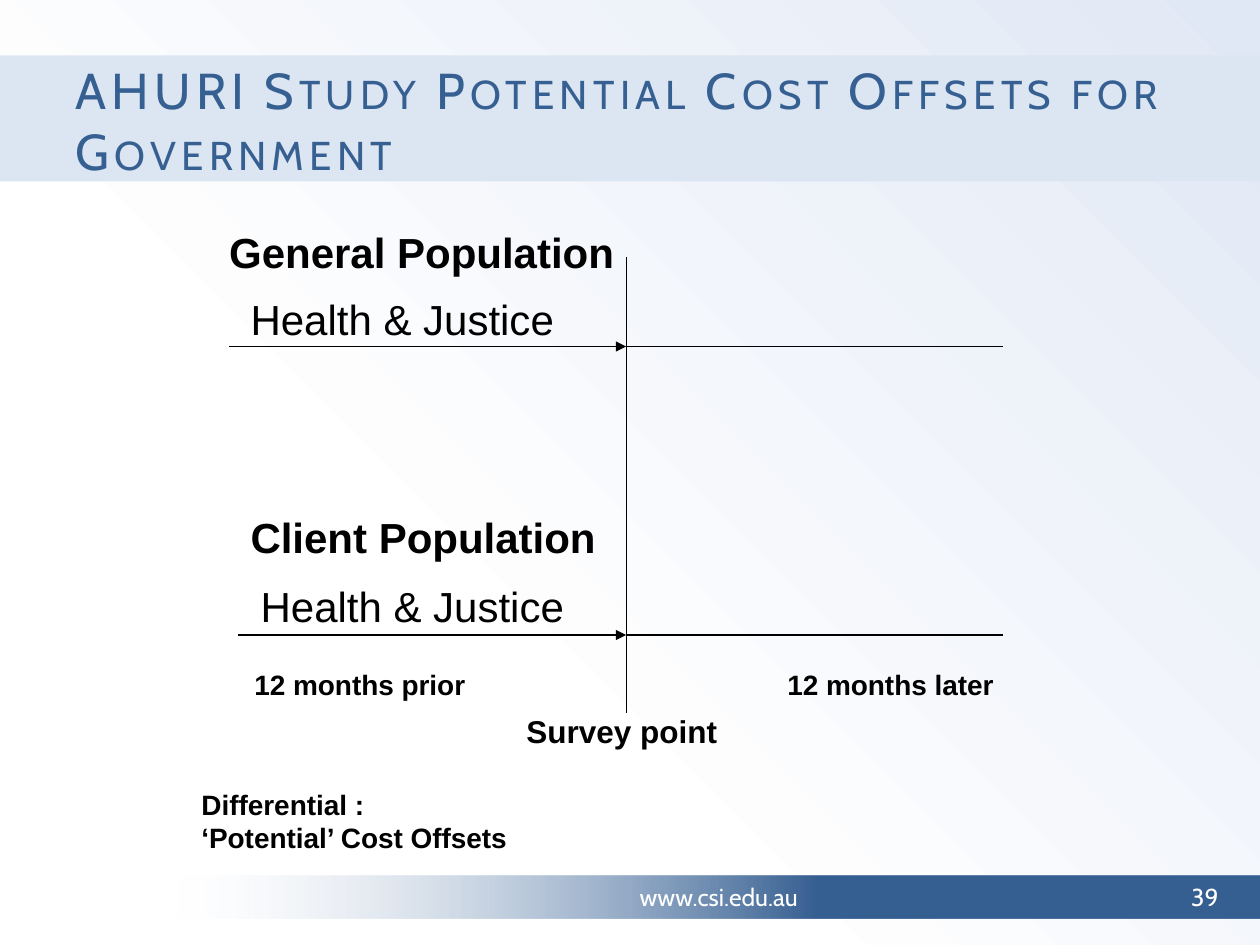
from lxml import etree
from pptx import Presentation
from pptx.dml.color import RGBColor
from pptx.enum.shapes import MSO_CONNECTOR, MSO_SHAPE
from pptx.enum.text import MSO_ANCHOR, MSO_AUTO_SIZE, PP_ALIGN
from pptx.oxml.ns import qn
from pptx.util import Inches, Pt

STRAIGHT = MSO_CONNECTOR.STRAIGHT
RECTANGLE = MSO_SHAPE.RECTANGLE
MIDDLE, TOP = MSO_ANCHOR.MIDDLE, MSO_ANCHOR.TOP
NO_FIT = MSO_AUTO_SIZE.NONE
LEFT, CENTER, RIGHT = PP_ALIGN.LEFT, PP_ALIGN.CENTER, PP_ALIGN.RIGHT

BLACK, WHITE, NAVY, PALE, MIST = "000000", "FFFFFF", "376092", "DCE6F2", "E1E8F5"

TITLE = "AHURI Study Potential Cost Offsets for Government"
WEBSITE = "www.csi.edu.au"
PAGE_NUMBER = "39"

LABELS = [
    (["General Population"], 1.72, 1.75, 3.28, 0.5, 24, True),
    (["Health & Justice"], 1.89, 2.28, 2.64, 0.5, 24, False),
    (["Client Population"], 1.89, 4.01, 2.96, 0.5, 24, True),
    (["Health & Justice"], 1.97, 4.56, 2.64, 0.5, 24, False),
    (["12 months prior"], 1.92, 5.25, 1.88, 0.37, 16, True),
    (["12 months later"], 6.15, 5.25, 1.85, 0.37, 16, True),
    (["Survey point"], 4.08, 5.6, 1.75, 0.4, 18, True),
    (["Differential :", "‘Potential’ Cost Offsets"], 1.5, 6.2, 2.65, 0.64, 16, True),
]

SURVEY_X, SURVEY_TOP, SURVEY_BOTTOM = 4.97, 2.04, 5.66
TIMELINE_END = 7.96
TIMELINES = [(1.82, 2.75), (1.89, 5.04)]


def color(value):
    return RGBColor.from_string(value)


def box(left, top, width, height):
    return Inches(left), Inches(top), Inches(width), Inches(height)


def write(frame, lines, size, font_name, font_color, bold=False, align=LEFT, anchor=TOP):
    frame.vertical_anchor = anchor
    for index, line in enumerate(lines):
        paragraph = frame.add_paragraph() if index else frame.paragraphs[0]
        paragraph.alignment = align
        run = paragraph.add_run()
        run.text = line
        run.font.size = Pt(size)
        run.font.name = font_name
        run.font.bold = bold
        run.font.color.rgb = color(font_color)


def add_label(slide, place, lines, size, font_name, font_color, bold=False, align=LEFT, wrap=False):
    frame = slide.shapes.add_textbox(*box(*place)).text_frame
    frame.word_wrap = wrap
    write(frame, lines, size, font_name, font_color, bold, align)


def add_bar(slide, *place):
    bar = slide.shapes.add_shape(RECTANGLE, *box(*place))
    bar.shadow.inherit = False
    bar.line.fill.background()
    return bar


def set_gradient(fill, stops):
    fill.gradient()
    for stop, (position, value) in zip(fill.gradient_stops, stops):
        stop.position = position
        stop.color.rgb = color(value)


def add_line(slide, x1, y1, x2, y2, arrow=False):
    line = slide.shapes.add_connector(STRAIGHT, Inches(x1), Inches(y1), Inches(x2), Inches(y2))
    line.line.color.rgb = color(BLACK)
    line.line.width = Pt(0.75)
    if arrow:
        etree.SubElement(line.line._get_or_add_ln(), qn("a:tailEnd"), type="triangle")
    etree.SubElement(line._element.spPr, qn("a:effectLst"))


def paint_background(slide):
    fill = slide.background.fill
    set_gradient(fill, [(0.35, WHITE), (1, MIST)])
    gradient = slide._element.find(".//" + qn("a:gradFill"))
    linear = gradient.find(qn("a:lin"))
    radial = etree.Element(qn("a:path"))
    radial.set("path", "circle")
    etree.SubElement(radial, qn("a:fillToRect"), t="100000", r="100000")
    gradient.replace(linear, radial)


def add_title(slide):
    add_bar(slide, 0, 0.44, 10, 1)
    band = slide.shapes[-1]
    band.fill.solid()
    band.fill.fore_color.rgb = color(PALE)
    title = slide.shapes.title
    band._element.addnext(title._element)
    title.left, title.top, title.width, title.height = box(0.5, 0.6, 9, 0.7)
    frame = title.text_frame
    frame.auto_size = NO_FIT
    frame.word_wrap = True
    write(frame, [TITLE], 28.8, "Cabin", NAVY, anchor=MIDDLE)
    properties = frame.paragraphs[0].runs[0].font._element
    properties.set("cap", "small")
    properties.set("spc", "300")


def add_footer(slide):
    footer = add_bar(slide, 1.41, 6.95, 8.59, 0.34)
    set_gradient(footer.fill, [(0, PALE), (0.59, NAVY)])
    footer.fill.gradient_angle = 0
    first_color = footer._element.find(".//" + qn("a:gs")).find(qn("a:srgbClr"))
    etree.SubElement(first_color, qn("a:alpha"), val="0")
    write(footer.text_frame, [WEBSITE], 14, "Cabin", WHITE, align=CENTER, anchor=MIDDLE)
    add_label(slide, (9.22, 6.95, 0.55, 0.34), [PAGE_NUMBER], 14, "Cabin", WHITE,
              align=RIGHT, wrap=True)


def add_timelines(slide):
    add_line(slide, SURVEY_X, SURVEY_TOP, SURVEY_X, SURVEY_BOTTOM)
    for start, y in TIMELINES:
        add_line(slide, start, y, SURVEY_X, y, arrow=True)
        add_line(slide, SURVEY_X, y, TIMELINE_END, y)


def main():
    deck = Presentation()
    deck.slide_width, deck.slide_height = Inches(10), Inches(7.5)
    slide = deck.slides.add_slide(deck.slide_layouts[5])
    paint_background(slide)
    add_title(slide)
    add_footer(slide)
    add_timelines(slide)
    for lines, left, top, width, height, size, bold in LABELS:
        add_label(slide, (left, top, width, height), lines, size, "Arial", BLACK, bold)
    deck.save("out.pptx")


if __name__ == "__main__":
    main()
